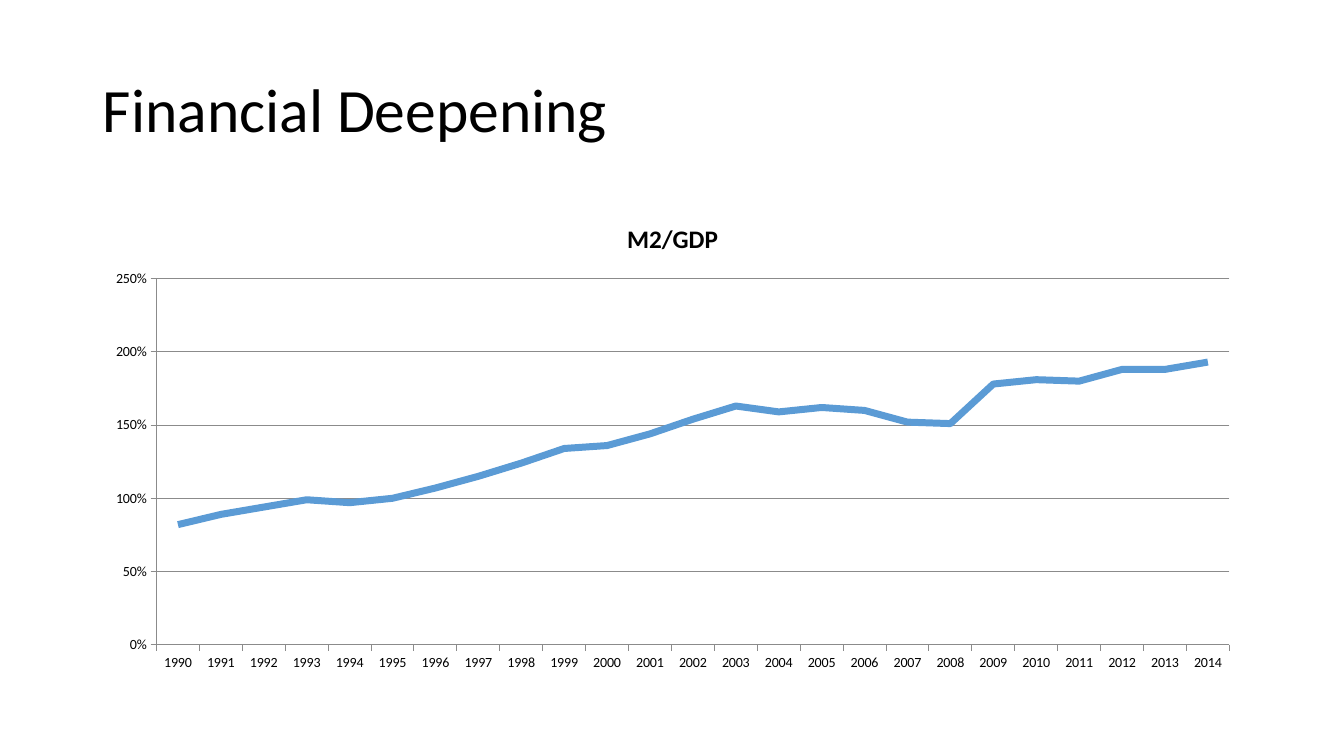
import pptx
import pptx.chart.data
import pptx.dml.color
import pptx.enum.chart
import pptx.enum.text
import pptx.oxml
import pptx.oxml.ns
import pptx.util

BLACK = pptx.dml.color.RGBColor(0x00, 0x00, 0x00)
GRAY = pptx.dml.color.RGBColor(0x8B, 0x8B, 0x8B)
BLUE = pptx.dml.color.RGBColor(0x5B, 0x9B, 0xD5)
FONT = "Calibri"

SLIDE_WIDTH = pptx.util.Inches(13.33)
SLIDE_HEIGHT = pptx.util.Inches(7.5)

# Left, top, width and height as shares of the slide
TITLE_AREA = (0.069, 0.053, 0.863, 0.193)
CHART_AREA = (0.069, 0.267, 0.863, 0.635)
# Plot area as shares of the chart
PLOT_AREA = {"x": 0.055, "y": 0.16, "w": 0.925, "h": 0.763}

FIRST_YEAR = 1990
MONEY_TO_GDP = (
    0.82, 0.89, 0.94, 0.99, 0.97, 1, 1.07, 1.15, 1.24, 1.34, 1.36, 1.44, 1.54,
    1.63, 1.59, 1.62, 1.6, 1.52, 1.51, 1.78, 1.81, 1.8, 1.88, 1.88, 1.93,
)


def set_attributes(target, values):
    for name, value in values.items():
        setattr(target, name, value)


def format_font(font, size, bold=False):
    set_attributes(font, {"name": FONT, "size": pptx.util.Pt(size), "bold": bold})
    font.color.rgb = BLACK


def format_line(line, color, width):
    line.color.rgb = color
    line.width = pptx.util.Pt(width)


def place(area):
    left, top, width, height = area
    return {
        "left": round(left * SLIDE_WIDTH),
        "top": round(top * SLIDE_HEIGHT),
        "width": round(width * SLIDE_WIDTH),
        "height": round(height * SLIDE_HEIGHT),
    }


def add_title(slide, text):
    shape = slide.shapes.title
    set_attributes(shape, place(TITLE_AREA))
    frame = shape.text_frame
    frame.text = text
    set_attributes(frame, {
        "vertical_anchor": pptx.enum.text.MSO_ANCHOR.MIDDLE,
        "word_wrap": True,
        "auto_size": pptx.enum.text.MSO_AUTO_SIZE.NONE,
    })
    paragraph = frame.paragraphs[0]
    set_attributes(paragraph, {
        "alignment": pptx.enum.text.PP_ALIGN.LEFT,
        "line_spacing": 0.9,
    })
    format_font(paragraph.runs[0].font, 44)


def format_axis(axis, values):
    set_attributes(axis, values)
    axis.major_tick_mark = pptx.enum.chart.XL_TICK_MARK.OUTSIDE
    format_line(axis.format.line, GRAY, 0.75)


def set_plot_area(chart):
    """Fix the inner plot area inside the chart."""
    places = "".join(f'<c:{key}Mode val="edge"/>' for key in "xy")
    sizes = "".join(f'<c:{key} val="{share}"/>' for key, share in PLOT_AREA.items())
    layout = pptx.oxml.parse_xml(
        f'<c:layout {pptx.oxml.ns.nsdecls("c")}><c:manualLayout>'
        f'<c:layoutTarget val="inner"/>{places}{sizes}'
        "</c:manualLayout></c:layout>"
    )
    plot_area = chart.plots[0]._element.getparent()
    for old in plot_area.findall(pptx.oxml.ns.qn("c:layout")):
        plot_area.remove(old)
    plot_area.insert(0, layout)


def add_line_chart(slide, name, first_year, values):
    data = pptx.chart.data.CategoryChartData(number_format="0%")
    data.categories = [str(first_year + step) for step in range(len(values))]
    data.add_series(name, values)
    position = place(CHART_AREA)
    chart = slide.shapes.add_chart(
        pptx.enum.chart.XL_CHART_TYPE.LINE,
        position["left"], position["top"], position["width"], position["height"],
        data,
    ).chart
    format_font(chart.font, 10)
    chart.has_legend = False

    # Chart title
    chart.has_title = True
    chart.chart_title.include_in_layout = False
    frame = chart.chart_title.text_frame
    frame.text = name
    format_font(frame.paragraphs[0].runs[0].font, 18, bold=True)

    # Axes and gridlines
    format_axis(chart.category_axis, {"has_major_gridlines": False})
    format_axis(chart.value_axis, {
        "minimum_scale": 0,
        "maximum_scale": 2.5,
        "major_unit": 0.5,
        "has_major_gridlines": True,
    })
    set_attributes(chart.value_axis.tick_labels, {
        "number_format": "0%",
        "number_format_is_linked": False,
    })
    format_line(chart.value_axis.major_gridlines.format.line, GRAY, 0.75)

    # Series
    plot = chart.plots[0]
    plot.vary_by_categories = False
    series = plot.series[0]
    series.smooth = False
    series.marker.style = pptx.enum.chart.XL_MARKER_STYLE.NONE
    format_line(series.format.line, BLUE, 5)
    set_plot_area(chart)


def main():
    presentation = pptx.Presentation()
    set_attributes(presentation, {
        "slide_width": SLIDE_WIDTH,
        "slide_height": SLIDE_HEIGHT,
    })
    title_only = presentation.slide_layouts[5]
    slide = presentation.slides.add_slide(title_only)
    add_title(slide, "Financial Deepening")
    add_line_chart(slide, "M2/GDP", FIRST_YEAR, MONEY_TO_GDP)
    presentation.save("out.pptx")


if __name__ == "__main__":
    main()
